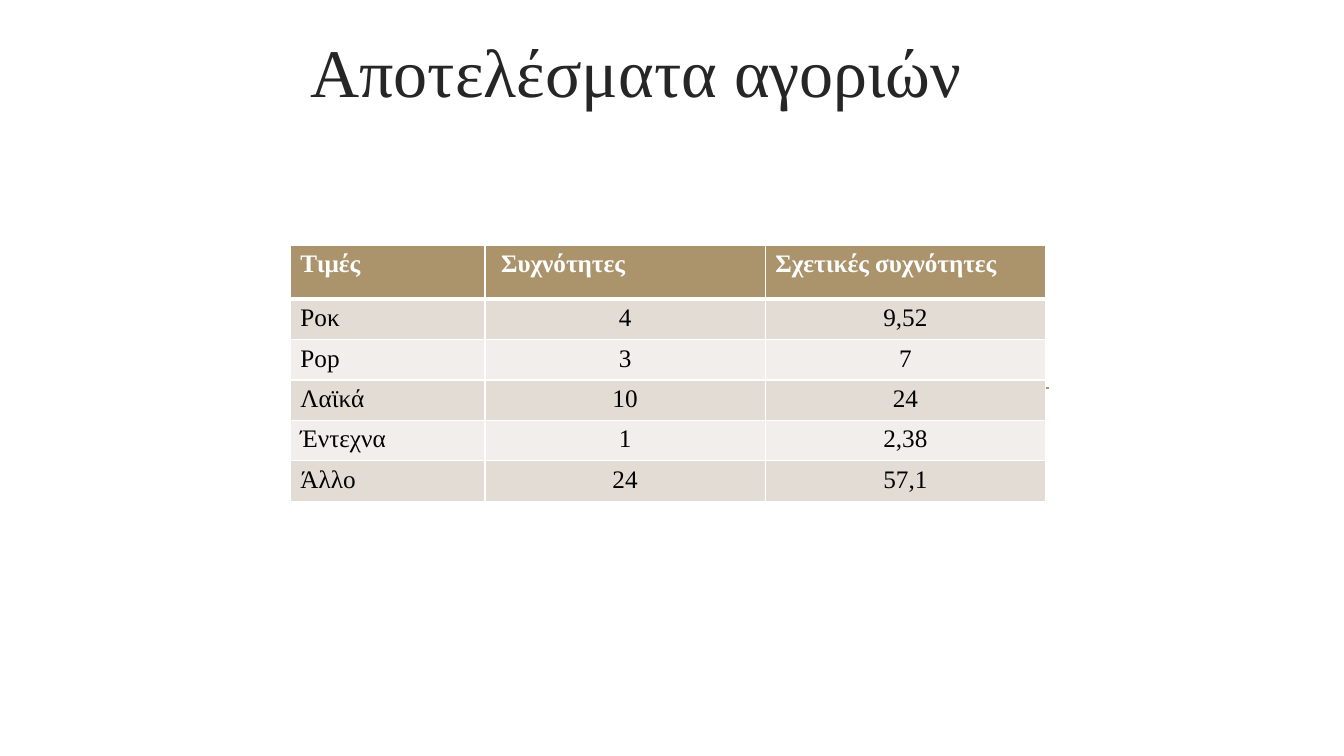
import pptx
import pptx.util
import pptx.dml.color
import pptx.enum.shapes
import pptx.enum.text
import pptx.oxml
import pptx.oxml.ns
from pptx.util import Inches, Pt

HUES = {"gold": "AB946B", "dark": "E2DCD4", "light": "F1EEEB",
        "white": "FFFFFF", "black": "000000", "title": "262626"}
FONT = "Times New Roman"
ROWS = [("Τιμές", "Συχνότητες", "Σχετικές συχνότητες"),
        ("Ροκ", "4", "9,52"),
        ("Pop", "3", "7"),
        ("Λαϊκά", "10", "24"),
        ("Έντεχνα", "1", "2,38"),
        ("Άλλο", "24", "57,1")]
WIDTHS = (1.93, 2.78, 2.78)
HEAD, BODY = 0.54, 0.4
ALIGN = pptx.enum.text.PP_ALIGN


def hue(name):
    return pptx.dml.color.RGBColor.from_string(HUES[name])


def style(para, size, color, bold=False):
    for run in para.runs:
        run.font.name = FONT
        run.font.size = Pt(size)
        run.font.bold = bold
        run.font.color.rgb = hue(color)


def add_title(slide, left, top, width, height):
    box = slide.shapes.add_textbox(Inches(left), Inches(top), Inches(width), Inches(height))
    frame = box.text_frame
    frame.word_wrap = True
    frame.vertical_anchor = pptx.enum.text.MSO_ANCHOR.BOTTOM
    frame.text = "Αποτελέσματα αγοριών"
    para = frame.paragraphs[0]
    para.alignment = ALIGN.CENTER
    style(para, 48.6, "title")


def add_rule(slide, left, top, width):
    line = slide.shapes.add_connector(
        pptx.enum.shapes.MSO_CONNECTOR.STRAIGHT,
        Inches(left), Inches(top), Inches(left + width), Inches(top))
    line.line.color.rgb = hue("gold")
    line.line.width = Pt(1.25)
    props = line._element.spPr
    props.append(pptx.oxml.parse_xml(
        f'<a:effectLst {pptx.oxml.ns.nsdecls("a")}/>'))


def add_edges(cell, top, bottom):
    """Draw white cell borders; top and bottom are widths in points."""
    props = cell._tc.get_or_add_tcPr()
    for side, width in (("L", 1), ("R", 1), ("T", top), ("B", bottom)):
        props.append(pptx.oxml.parse_xml(
            f'<a:ln{side} {pptx.oxml.ns.nsdecls("a")} w="{Pt(width)}">'
            f'<a:solidFill><a:srgbClr val="{HUES["white"]}"/></a:solidFill>'
            f'</a:ln{side}>'))


def fill_cell(cell, text, row, col):
    head = row == 0
    add_edges(cell, 3 if row == 1 else 1, 3 if head else 1)
    cell.fill.solid()
    cell.fill.fore_color.rgb = hue("gold" if head else "dark" if row % 2 else "light")
    cell.text = text
    para = cell.text_frame.paragraphs[0]
    para.alignment = ALIGN.LEFT if head or col == 0 else ALIGN.CENTER
    style(para, 18, "white" if head else "black", head)


def add_grid(slide, left, top):
    height = HEAD + BODY * (len(ROWS) - 1)
    table = slide.shapes.add_table(
        len(ROWS), len(WIDTHS), Inches(left), Inches(top),
        Inches(sum(WIDTHS)), Inches(height)).table
    for col, width in enumerate(WIDTHS):
        table.columns[col].width = Inches(width)
    for row, texts in enumerate(ROWS):
        table.rows[row].height = Inches(BODY if row else HEAD)
        for col, text in enumerate(texts):
            fill_cell(table.cell(row, col), text, row, col)
    table.cell(0, 1).margin_left = Inches(0.16)


def main():
    deck = pptx.Presentation()
    deck.slide_width = Inches(13.33)
    deck.slide_height = Inches(7.5)
    slide = deck.slides.add_slide(deck.slide_layouts[6])
    add_rule(slide, 2.94, 3.85, 7.46)
    add_title(slide, 1.55, 0.21, 9.52, 0.94)
    add_grid(slide, 2.88, 2.43)
    deck.save("out.pptx")


if __name__ == "__main__":
    main()
